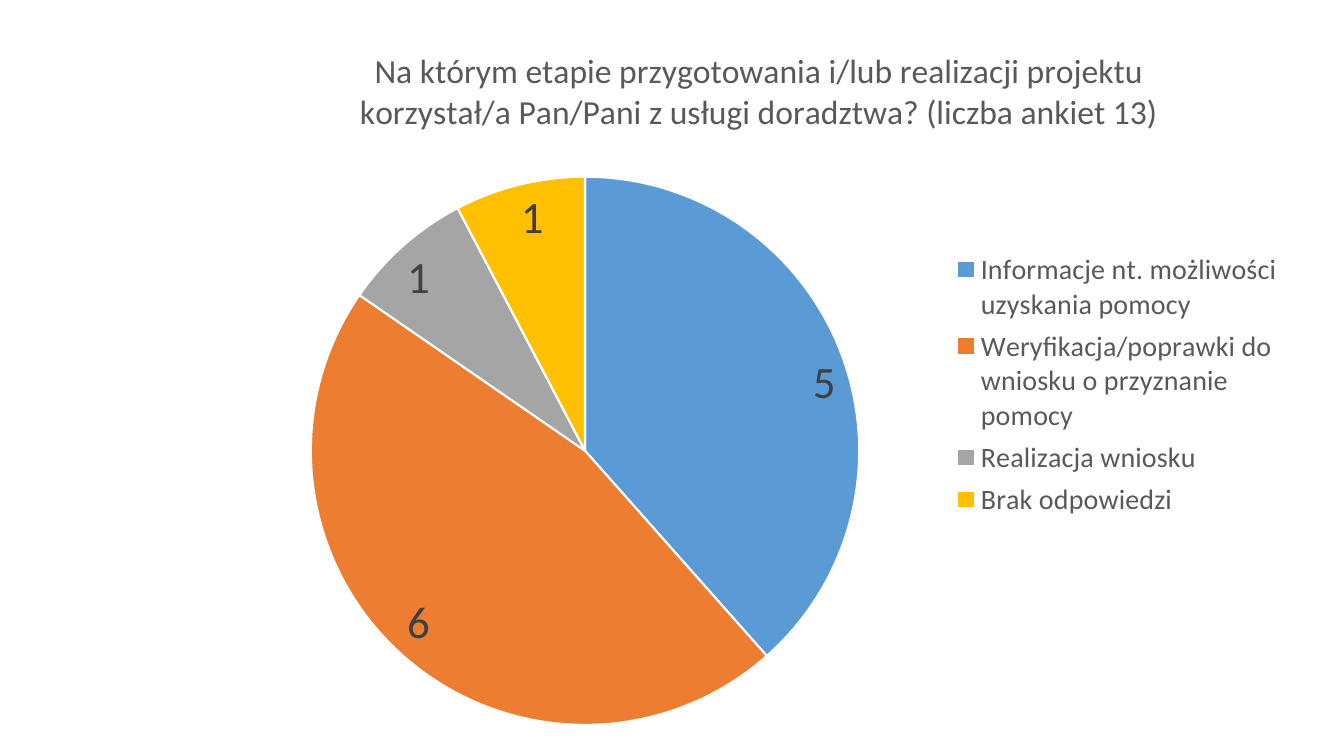
"""Build a slide with a pie chart of the survey answers on advisory services."""
from pptx import Presentation
from pptx import util as u
from pptx.chart import data
from pptx.dml.color import RGBColor
from pptx.enum import chart as charts
from pptx.oxml import parse_xml
from pptx.oxml.ns import nsdecls

TITLE = ("Na którym etapie przygotowania i/lub realizacji projektu "
         "korzystał/a Pan/Pani z usługi doradztwa? (liczba ankiet 13)")
ANSWERS = [
    ("Informacje nt. możliwości uzyskania pomocy", 5, "5B9BD5"),
    ("Weryfikacja/poprawki do wniosku o przyznanie pomocy", 6, "ED7D31"),
    ("Realizacja wniosku", 1, "A5A5A5"),
    ("Brak odpowiedzi", 1, "FFC000"),
]


def color(value):
    return RGBColor.from_string(value)


def format_font(font, size, fill, name="Calibri", bold=False):
    font.size, font.name, font.bold = u.Pt(size), name, bold
    font.color.rgb = color(fill)


def manual_layout(x, y, width, height, inner=False):
    target = '<c:layoutTarget val="inner"/>' if inner else ""
    sizes = "".join(f'<c:{tag} val="{share}"/>' for tag, share in
                    zip("xywh", (x, y, width, height)))
    return parse_xml(
        f'<c:layout {nsdecls("c")}><c:manualLayout>{target}'
        f'<c:xMode val="edge"/><c:yMode val="edge"/>{sizes}'
        f'</c:manualLayout></c:layout>')


class SurveySlide:
    text_color = "595959"
    label_color = "404040"
    edge_color = "FFFFFF"

    def __init__(self, presentation):
        self.width = presentation.slide_width
        self.height = presentation.slide_height
        self.slide = presentation.slides.add_slide(presentation.slide_layouts[6])

    def add_pie(self, answers, left, top, width, height):
        chart_data = data.CategoryChartData(number_format="General")
        chart_data.categories = [name for name, _, _ in answers]
        chart_data.add_series("Series 1", [count for _, count, _ in answers])
        chart = self.slide.shapes.add_chart(
            charts.XL_CHART_TYPE.PIE,
            int(left * self.width), int(top * self.height),
            int(width * self.width), int(height * self.height),
            chart_data).chart
        format_font(chart.font, 10, "000000")
        plot = chart.plots[0]
        plot.vary_by_categories = True
        for index, (_, _, fill) in enumerate(answers):
            slice_format = plot.series[0].points[index].format
            slice_format.fill.solid()
            slice_format.fill.fore_color.rgb = color(fill)
            slice_format.line.color.rgb = color(self.edge_color)
            slice_format.line.width = u.Pt(1.5)
        plot_area = chart._chartSpace.chart.plotArea
        for layout in plot_area.findall("{*}layout"):
            plot_area.remove(layout)
        plot_area.insert(0, manual_layout(0.08, 0.215, 0.515, 0.765, inner=True))
        return chart

    def add_title(self, chart, title):
        chart.has_title = True
        chart.chart_title.include_in_layout = False
        paragraph = chart.chart_title.text_frame.paragraphs[0]
        run = paragraph.add_run()
        run.text = title
        format_font(run.font, 24, self.text_color)

    def add_labels(self, chart):
        labels = chart.plots[0].series[0].data_labels
        labels.show_value = True
        labels.position = charts.XL_LABEL_POSITION.INSIDE_END
        format_font(labels.font, 32, self.label_color)

    def add_legend(self, chart):
        chart.has_legend = True
        legend = chart.legend
        legend.position = charts.XL_LEGEND_POSITION.RIGHT
        legend.include_in_layout = False
        format_font(legend.font, 20, self.text_color)
        element = legend._element
        for layout in element.findall("{*}layout"):
            element.remove(layout)
        element.find("{*}legendPos").addnext(manual_layout(0.67, 0.31, 0.33, 0.39))


def main():
    presentation = Presentation()
    presentation.slide_width = u.Inches(13.33)
    presentation.slide_height = u.Inches(7.5)
    survey = SurveySlide(presentation)
    chart = survey.add_pie(ANSWERS, left=1 / 6, top=0.03, width=0.796, height=0.948)
    survey.add_title(chart, TITLE)
    survey.add_labels(chart)
    survey.add_legend(chart)
    presentation.save("out.pptx")


if __name__ == "__main__":
    main()
